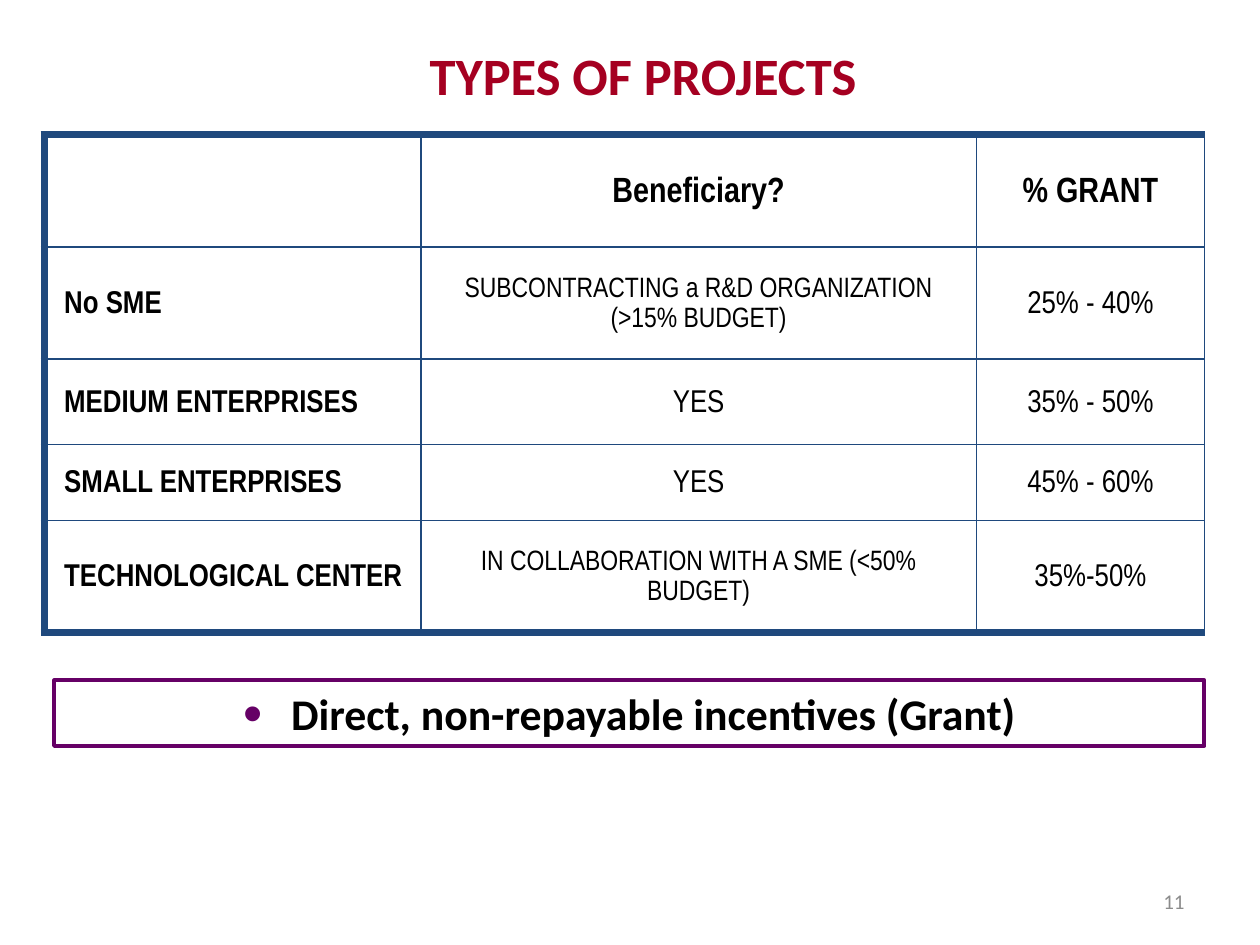
from dataclasses import dataclass

from lxml.etree import SubElement
from pptx import Presentation
from pptx.dml.color import RGBColor
from pptx.enum.shapes import MSO_SHAPE as Shape
from pptx.enum.text import MSO_ANCHOR as Anchor, PP_ALIGN as Align
from pptx.oxml.ns import qn
from pptx.util import Inches, Pt


@dataclass(frozen=True)
class Theme:
    title_color: str = "A50021"
    text_color: str = "000000"
    grid_color: str = "1F497D"
    accent: str = "660066"
    muted: str = "8C8C8C"
    heading_font: str = "Calibri"
    table_font: str = "Arial Narrow"
    title_size: int = 30
    callout_size: int = 25
    header_size: int = 20
    body_size: int = 18
    detail_size: int = 16
    number_size: int = 12
    thin: float = 1
    thick: float = 4.5


class SlideBuilder:
    def __init__(self, slide, theme):
        self.slide = slide
        self.theme = theme

    def style(self, paragraph, size, color, font, bold=False, align=Align.CENTER):
        paragraph.alignment = align
        for run in paragraph.runs:
            run.font.name = font
            run.font.size = Pt(size)
            run.font.bold = bold
            run.font.color.rgb = RGBColor.from_string(color)

    def text(self, box, text, size, color, bold=False, align=Align.CENTER):
        shape = self.slide.shapes.add_textbox(*map(Inches, box))
        frame = shape.text_frame
        frame.word_wrap = True
        frame.vertical_anchor = Anchor.MIDDLE
        frame.text = text
        self.style(frame.paragraphs[0], size, color, self.theme.heading_font, bold, align)

    def callout(self, box, text):
        theme = self.theme
        shape = self.slide.shapes.add_shape(Shape.RECTANGLE, *map(Inches, box))
        shape.shadow.inherit = False
        shape.fill.background()
        shape.line.color.rgb = RGBColor.from_string(theme.accent)
        shape.line.width = Pt(2.25)
        frame = shape.text_frame
        frame.word_wrap = True
        frame.vertical_anchor = Anchor.MIDDLE
        frame.text = text
        paragraph = frame.paragraphs[0]
        self.bullet(paragraph, Inches(0.38))
        self.style(paragraph, theme.callout_size, theme.text_color, theme.heading_font, True)

    def bullet(self, paragraph, indent):
        properties = paragraph._p.get_or_add_pPr()
        properties.set("marL", str(indent))
        properties.set("indent", str(-indent))
        color = SubElement(properties, qn("a:buClr"))
        SubElement(color, qn("a:srgbClr"), val=self.theme.accent)
        SubElement(properties, qn("a:buSzPct"), val="125000")
        SubElement(properties, qn("a:buFont"), typeface="Arial")
        SubElement(properties, qn("a:buChar"), char="•")

    def borders(self, cell, widths):
        properties = cell._tc.get_or_add_tcPr()
        for side, width in widths.items():
            line = SubElement(properties, qn(f"a:ln{side}"), w=str(Pt(width)))
            fill = SubElement(line, qn("a:solidFill"))
            SubElement(fill, qn("a:srgbClr"), val=self.theme.grid_color)

    def cell(self, cell, text, size, bold, align, margin):
        cell.fill.background()
        cell.vertical_anchor = Anchor.MIDDLE
        cell.margin_left = Inches(margin)
        cell.margin_right = Inches(0.1)
        cell.margin_top = cell.margin_bottom = 0
        cell.text_frame.text = text
        for paragraph in cell.text_frame.paragraphs:
            paragraph.line_spacing = 1.15
            self.style(paragraph, size, self.theme.text_color, self.theme.table_font, bold, align)

    def table(self, box, widths, heights, rows):
        theme = self.theme
        frame = self.slide.shapes.add_table(len(rows), len(widths), *map(Inches, box))
        table = frame.table
        table.first_row = table.horz_banding = False
        for column, width in zip(table.columns, widths):
            column.width = Inches(width)
        for row, height in zip(table.rows, heights):
            row.height = Inches(height)
        last = len(rows) - 1
        for r, row in enumerate(rows):
            for c, text in enumerate(row):
                cell = table.cell(r, c)
                # Heavy rule on the left, top and bottom; the right side stays thin
                self.borders(cell, {
                    "L": theme.thick if c == 0 else theme.thin,
                    "R": theme.thin,
                    "T": theme.thick if r == 0 else theme.thin,
                    "B": theme.thick if r == last else theme.thin,
                })
                size = theme.body_size
                if r == 0:
                    size = theme.header_size
                elif c == 1 and text != "YES":
                    size = theme.detail_size
                label = c == 0
                self.cell(cell, text, size, bold=r == 0 or label,
                          align=Align.LEFT if label else Align.CENTER,
                          margin=0.16 if label else 0.1)


def main():
    presentation = Presentation()
    presentation.slide_width = Inches(10)
    presentation.slide_height = Inches(7.5)
    slide = presentation.slides.add_slide(presentation.slide_layouts[6])
    theme = Theme()
    builder = SlideBuilder(slide, theme)

    # Title
    builder.text((1.8, 0.29, 6.61, 0.61), "TYPES OF PROJECTS",
                 theme.title_size, theme.title_color, bold=True)

    # Grant rates by type of beneficiary
    builder.table(
        (0.35, 1.07, 9.21, 3.95),
        widths=(2.99, 4.41, 1.81),
        heights=(0.89, 0.89, 0.68, 0.6, 0.89),
        rows=[
            ("", "Beneficiary?", "% GRANT"),
            ("No SME", "SUBCONTRACTING a R&D ORGANIZATION\n(>15% BUDGET)", "25% - 40%"),
            ("MEDIUM ENTERPRISES", "YES", "35% - 50%"),
            ("SMALL ENTERPRISES", "YES", "45% - 60%"),
            ("TECHNOLOGICAL CENTER", "IN COLLABORATION WITH A SME (<50% BUDGET)", "35%-50%"),
        ],
    )

    # Key message
    builder.callout((0.43, 5.4, 9.13, 0.52), "Direct, non-repayable incentives (Grant)")

    # Slide number
    builder.text((7.17, 6.95, 2.33, 0.4), "11", theme.number_size, theme.muted, align=Align.RIGHT)

    presentation.save("out.pptx")


if __name__ == "__main__":
    main()
